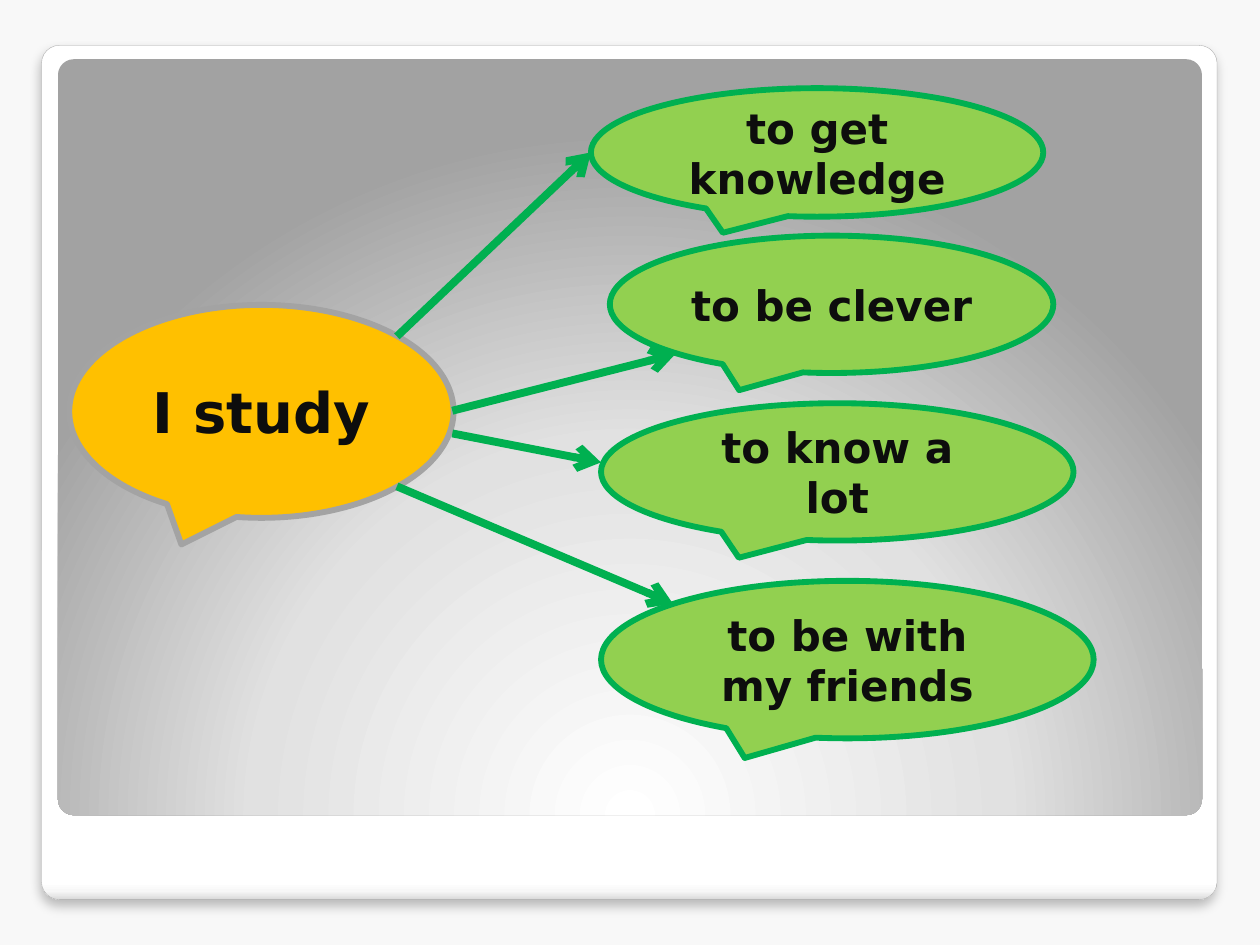
from lxml import etree
from pptx import Presentation
from pptx.dml.color import RGBColor
from pptx.enum.shapes import MSO_CONNECTOR, MSO_SHAPE
from pptx.enum.text import MSO_ANCHOR, PP_ALIGN
from pptx.oxml import parse_xml
from pptx.oxml.ns import nsdecls, qn
from pptx.util import Inches, Pt

ROUND_RECT = MSO_SHAPE.ROUNDED_RECTANGLE
CALLOUT = MSO_SHAPE.OVAL_CALLOUT
STRAIGHT = MSO_CONNECTOR.STRAIGHT
MIDDLE = MSO_ANCHOR.MIDDLE
CENTER = PP_ALIGN.CENTER

BACKGROUND = RGBColor(0xF8, 0xF8, 0xF8)
FRAME_LINE = RGBColor(0xA4, 0xA4, 0xA4)
ORANGE = RGBColor(0xFF, 0xC0, 0x00)
GRAY = RGBColor(0xA3, 0xA3, 0xA3)
LIGHT_GREEN = RGBColor(0x92, 0xD0, 0x50)
GREEN = RGBColor(0x00, 0xB0, 0x50)
INK = RGBColor(0x0D, 0x0D, 0x0D)
FONT = "DejaVu Sans"

FRAME_STOPS = [(0, "FFFFFF"), (98, "FFFFFF"), (99, "F7F7F7"), (100, "DADADA")]
PANEL_STOPS = [(0, "FFFFFF"), (55, "E1E1E1"), (100, "A2A2A2")]
DOWNWARD = '<a:lin ang="5400000" scaled="0"/>'
FROM_BOTTOM = ('<a:path path="circle"><a:fillToRect l="50000" t="175000" '
               'r="50000" b="-75000"/></a:path>')

REASONS = [
    ("to get knowledge", (4.69, 0.7, 3.59, 1.02)),
    ("to be clever", (4.84, 1.87, 3.52, 1.09)),
    ("to know a lot", (4.77, 3.2, 3.75, 1.09)),
    ("to be with my friends", (4.77, 4.61, 3.91, 1.25)),
]
ARROWS = [
    ((3.59, 3.44), (4.77, 3.67)),
    ((3.15, 3.86), (5.34, 4.79)),
    ((3.59, 3.26), (5.36, 2.81)),
    ((3.15, 2.67), (4.69, 1.21)),
]


def add_panel(slide, box, stops, direction):
    """Add a slightly rounded rectangle with a gradient and no line."""
    sp = slide.shapes.add_shape(ROUND_RECT, *map(Inches, box))
    sp.adjustments[0] = 0.021
    sp.line.fill.background()
    sp.shadow.inherit = False
    colors = "".join(
        f'<a:gs pos="{pos * 1000}"><a:srgbClr val="{color}"/></a:gs>'
        for pos, color in stops)
    gradient = parse_xml(
        f'<a:gradFill {nsdecls("a")} rotWithShape="1">'
        f'<a:gsLst>{colors}</a:gsLst>{direction}</a:gradFill>')
    sp._element.spPr.find(qn("a:prstGeom")).addnext(gradient)
    return sp


def add_frame(slide, box):
    sp = add_panel(slide, box, FRAME_STOPS, DOWNWARD)
    sp.line.color.rgb = FRAME_LINE
    sp.line.width = Pt(0.16)
    effects = sp._element.spPr.find(qn("a:effectLst"))
    effects.append(parse_xml(
        f'<a:outerShdw {nsdecls("a")} blurRad="{Pt(6)}" dist="{Pt(4)}" '
        'dir="5400000" rotWithShape="0"><a:srgbClr val="000000">'
        '<a:alpha val="25000"/></a:srgbClr></a:outerShdw>'))


def add_bubble(slide, box, text, size, fill, line):
    sp = slide.shapes.add_shape(CALLOUT, *map(Inches, box))
    sp.shadow.inherit = False
    sp.fill.solid()
    sp.fill.fore_color.rgb = fill
    sp.line.color.rgb = line
    sp.line.width = Pt(3.35)
    tf = sp.text_frame
    tf.word_wrap = True
    tf.vertical_anchor = MIDDLE
    p = tf.paragraphs[0]
    p.text = text
    p.alignment = CENTER
    p.font.name = FONT
    p.font.size = Pt(size)
    p.font.bold = True
    p.font.color.rgb = INK


def add_arrow(slide, start, end):
    arrow = slide.shapes.add_connector(STRAIGHT, *map(Inches, start + end))
    arrow.line.color.rgb = GREEN
    arrow.line.width = Pt(4.5)
    etree.SubElement(arrow.line._get_or_add_ln(), qn("a:tailEnd"), type="arrow")
    etree.SubElement(arrow._element.spPr, qn("a:effectLst"))


def main():
    prs = Presentation()
    prs.slide_width, prs.slide_height = Inches(10), Inches(7.5)
    slide = prs.slides.add_slide(prs.slide_layouts[6])
    slide.background.fill.solid()
    slide.background.fill.fore_color.rgb = BACKGROUND

    add_frame(slide, (0.33, 0.36, 9.33, 6.78))
    add_panel(slide, (0.46, 0.47, 9.08, 6), PANEL_STOPS, FROM_BOTTOM)
    add_bubble(slide, (0.55, 2.42, 3.05, 1.69), "I study", 32, ORANGE, GRAY)
    for text, box in REASONS:
        add_bubble(slide, box, text, 24, LIGHT_GREEN, GREEN)
    for start, end in ARROWS:
        add_arrow(slide, start, end)
    prs.save("out.pptx")


if __name__ == "__main__":
    main()
